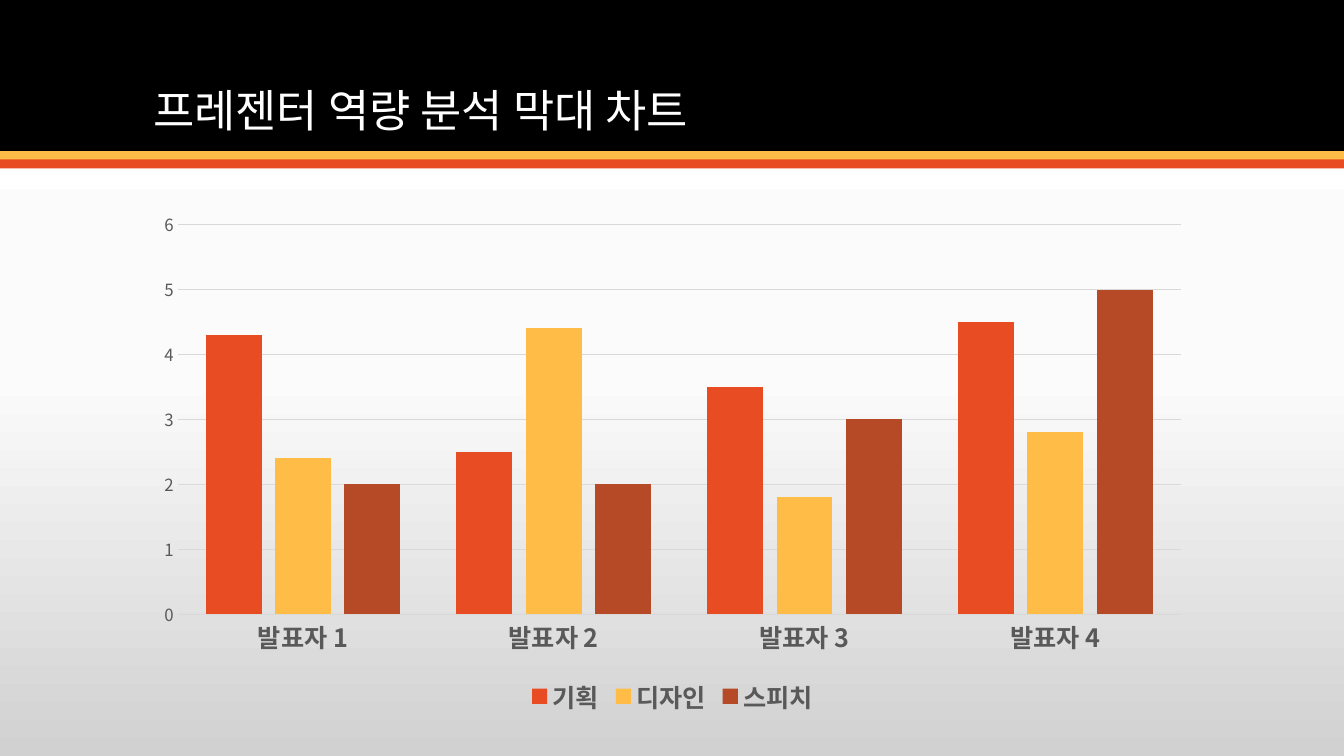
"""Build a slide with a column chart of presenter skills."""
import copy
import dataclasses
import typing

import pptx
import pptx.chart.data
import pptx.dml.color
import pptx.enum.chart
import pptx.enum.shapes
import pptx.enum.text
import pptx.oxml.ns
import pptx.oxml.xmlchemy
import pptx.util
from lxml import etree

Inches = pptx.util.Inches
Pt = pptx.util.Pt
qn = pptx.oxml.ns.qn

HUES = {
    "black": "000000", "white": "FFFFFF", "pale": "FBFBFB", "gray": "D1D1D1",
    "grid": "D9D9D9", "text": "595959",
    "red": "E84C22", "gold": "FFBD47", "rust": "B64926",
}
SANS = "Noto Sans CJK KR"
SERIF = "TeX Gyre Pagella"


@dataclasses.dataclass
class Band:
    top: float
    high: float
    hue: str


@dataclasses.dataclass
class Skill:
    name: str
    vals: tuple[float, ...]
    hue: str


@dataclasses.dataclass
class Stop:
    pos: float
    hue: str


BANDS = [Band(0, 1.5, "black"), Band(1.5, 0.09, "gold"), Band(1.58, 0.09, "red")]
SKILLS = [
    Skill("기획", (4.3, 2.5, 3.5, 4.5), "red"),
    Skill("디자인", (2.4, 4.4, 1.8, 2.8), "gold"),
    Skill("스피치", (2, 2, 3, 5), "rust"),
]
STOPS = [Stop(0, "white"), Stop(0.5, "pale"), Stop(1, "gray")]


def rgb(hue: str) -> pptx.dml.color.RGBColor:
    """Return the named colour."""
    return pptx.dml.color.RGBColor.from_string(HUES[hue])


def apply(item: typing.Any, form: dict[str, typing.Any]) -> None:
    """Set each attribute in the format dict."""
    for key, val in form.items():
        setattr(item, key, val)


def style(font: typing.Any, size: int, hue: str, bold: bool = False,
          face: str = SANS) -> None:
    """Format a font."""
    apply(font, {"size": Pt(size), "bold": bold, "name": face})
    font.color.rgb = rgb(hue)


def asian(root: typing.Any) -> None:
    """Use each Latin typeface for East Asian text as well."""
    for latin in list(root.iter(qn("a:latin"))):
        east = etree.Element(qn("a:ea"), typeface=latin.get("typeface"))
        latin.addnext(east)


def paint(slide: typing.Any) -> None:
    """Fill the background with a vertical gradient."""
    fill = slide.background.fill
    fill.gradient()
    fill.gradient_angle = 270
    first = slide.element.find(".//" + qn("a:gs"))
    first.addnext(copy.deepcopy(first))
    for mark, stop in zip(fill.gradient_stops, STOPS):
        mark.position = stop.pos
        mark.color.rgb = rgb(stop.hue)


def strip(slide: typing.Any, band: Band, wide: int) -> None:
    """Draw one band across the slide."""
    shape = slide.shapes.add_shape(
        pptx.enum.shapes.MSO_SHAPE.RECTANGLE,
        0, Inches(band.top), wide, Inches(band.high))
    shape.shadow.inherit = False
    shape.fill.solid()
    shape.fill.fore_color.rgb = rgb(band.hue)
    shape.line.fill.background()


def head(slide: typing.Any) -> None:
    """Place and format the title above the bands."""
    title = slide.shapes.title
    apply(title, {"left": Inches(1.42), "top": Inches(0.28),
                  "width": Inches(10.5), "height": Inches(1.13)})
    frame = title.text_frame
    frame.text = "프레젠터 역량 분석 막대 차트"
    apply(frame, {"vertical_anchor": pptx.enum.text.MSO_ANCHOR.BOTTOM,
                  "word_wrap": True})
    para = frame.paragraphs[0]
    apply(para, {"alignment": pptx.enum.text.PP_ALIGN.LEFT, "line_spacing": 0.9})
    style(para.runs[0].font, 32, "white")
    asian(title.element)
    title.element.getparent().append(title.element)


def rule(line: typing.Any) -> None:
    """Format a thin grey chart line."""
    line.width = Pt(0.75)
    line.color.rgb = rgb("grid")


def graph(slide: typing.Any) -> None:
    """Add the column chart."""
    data = pptx.chart.data.CategoryChartData()
    data.categories = [f"발표자 {num}" for num in range(1, 5)]
    for skill in SKILLS:
        data.add_series(skill.name, skill.vals)
    kinds = pptx.enum.chart
    chart = slide.shapes.add_chart(
        kinds.XL_CHART_TYPE.COLUMN_CLUSTERED,
        Inches(1.42), Inches(2), Inches(10.5), Inches(5.14), data).chart
    apply(chart, {"has_title": False, "has_legend": True})
    style(chart.font, 10, "black", face=SERIF)

    none = kinds.XL_TICK_MARK.NONE
    ticks = {"major_tick_mark": none, "minor_tick_mark": none}
    cats, vals = chart.category_axis, chart.value_axis
    apply(cats, ticks)
    apply(vals, ticks | {"minimum_scale": 0, "maximum_scale": 6, "major_unit": 1,
                         "has_major_gridlines": True})
    style(cats.tick_labels.font, 18, "text", True)
    style(vals.tick_labels.font, 12, "text")
    rule(cats.format.line)
    rule(vals.major_gridlines.format.line)
    vals.format.line.fill.background()

    apply(chart.legend, {"position": kinds.XL_LEGEND_POSITION.BOTTOM,
                         "include_in_layout": False})
    style(chart.legend.font, 18, "text", True)

    plot = chart.plots[0]
    apply(plot, {"gap_width": 100, "overlap": -24, "vary_by_categories": False})
    for bars, skill in zip(plot.series, SKILLS):
        bars.format.fill.solid()
        bars.format.fill.fore_color.rgb = rgb(skill.hue)
    asian(chart.element if hasattr(chart, "element") else chart.font._element)


def main() -> None:
    """Build and save the deck."""
    deck = pptx.Presentation()
    apply(deck, {"slide_width": Inches(13.33), "slide_height": Inches(7.5)})
    slide = deck.slides.add_slide(deck.slide_layouts.get_by_name("Title Only"))
    paint(slide)
    for band in BANDS:
        strip(slide, band, deck.slide_width)
    head(slide)
    graph(slide)
    deck.save("out.pptx")


if __name__ == "__main__":
    main()
